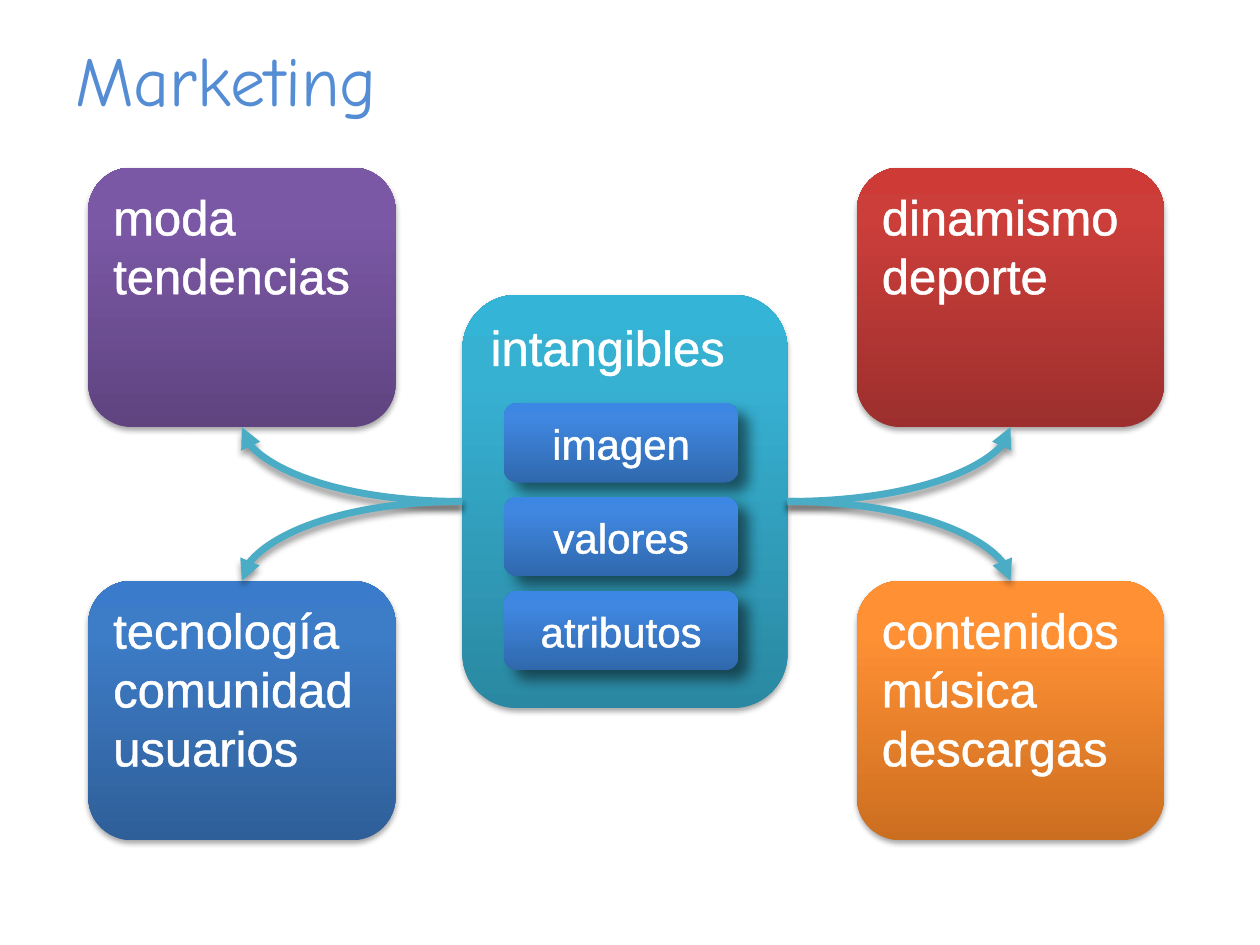
from dataclasses import dataclass

from lxml import etree
from pptx import Presentation
from pptx import util as u
from pptx.dml.color import RGBColor
from pptx.enum import shapes, text
from pptx.oxml.ns import qn


@dataclass(frozen=True)
class Theme:
    font: str = "Arial"
    title_font: str = "Comic Neue"
    title_size: int = 40
    box_size: int = 28
    chip_size: int = 24
    title: str = "548DD4"
    white: str = "FFFFFF"
    arrow: str = "4BACC6"
    purple: tuple = ("5F4480", "7B58A6", "7C57A8")
    red: tuple = ("9C2F2D", "CB3E3A", "CE3B37")
    blue: tuple = ("2F5F99", "3D7CC7", "3A7CCB")
    orange: tuple = ("CC6E20", "FF9034", "FF9136")
    teal: tuple = ("2A88A2", "37B1D2", "34B4D6")
    chip: tuple = ("3068AD", "3F87E0", "3C87E4")
    box_shadow: tuple = (35, 3.1, 1.8, 90)
    chip_shadow: tuple = (50, 8, 8, 40)
    arrow_shadow: tuple = (40, 4, 3, 90)


THEME = Theme()
TOP, LEFT, BOTTOM, RIGHT = range(4)


def add_color(parent, color):
    return etree.SubElement(parent, qn("a:srgbClr"), val=color)


def add_shadow(spPr, alpha, blur, dist, angle):
    effects = spPr.find(qn("a:effectLst"))
    if effects is None:
        effects = etree.SubElement(spPr, qn("a:effectLst"))
    shadow = etree.SubElement(
        effects, qn("a:outerShdw"), blurRad=str(u.Pt(blur)),
        dist=str(u.Pt(dist)), dir=str(angle * 60000), rotWithShape="0")
    etree.SubElement(add_color(shadow, "000000"), qn("a:alpha"),
                     val=str(alpha * 1000))


def fill_gradient(s, colors):
    s.fill.gradient()
    s.fill.gradient_angle = 90
    stops = s._element.spPr.find(f".//{qn('a:gsLst')}")
    for stop in list(stops):
        stops.remove(stop)
    for pos, color in zip((0, 80, 100), colors):
        add_color(etree.SubElement(stops, qn("a:gs"), pos=str(pos * 1000)), color)


def add_run(p, words, font, size, color):
    r = p.add_run()
    r.text = words
    r.font.name = font
    r.font.size = u.Pt(size)
    r.font.color.rgb = RGBColor.from_string(color)
    return r


def outline_run(r):
    ln = etree.Element(qn("a:ln"), w=str(u.Pt(1.45)))
    add_color(etree.SubElement(ln, qn("a:solidFill")), THEME.white)
    r.font._element.insert(0, ln)


def add_title(slide, words):
    s = slide.shapes.add_textbox(u.Inches(0.5), u.Inches(0.3), u.Inches(9), u.Inches(0.64))
    tf = s.text_frame
    tf.word_wrap = True
    tf.vertical_anchor = text.MSO_ANCHOR.MIDDLE
    add_run(tf.paragraphs[0], words, THEME.title_font, THEME.title_size, THEME.title)


def add_box(parent, place, lines, colors, size, shadow, centred=False):
    s = parent.shapes.add_shape(shapes.MSO_SHAPE.ROUNDED_RECTANGLE,
                                *(u.Inches(v) for v in place))
    fill_gradient(s, colors)
    s.line.fill.background()
    s.shadow.inherit = False
    add_shadow(s._element.spPr, *shadow)
    tf = s.text_frame
    tf.word_wrap = True
    tf.vertical_anchor = text.MSO_ANCHOR.MIDDLE if centred else text.MSO_ANCHOR.TOP
    for i, line in enumerate(lines):
        p = tf.add_paragraph() if i else tf.paragraphs[0]
        p.alignment = text.PP_ALIGN.CENTER if centred else text.PP_ALIGN.LEFT
        outline_run(add_run(p, line, THEME.font, size, THEME.white))
    return s


def add_centre(slide):
    group = slide.shapes.add_group_shape()
    panel = add_box(group, (3.67, 2.34, 2.58, 3.28), ["intangibles"], THEME.teal,
                    THEME.box_size, THEME.box_shadow)
    for i, word in enumerate(("imagen", "valores", "atributos")):
        add_box(group, (4, 3.2 + 0.745 * i, 1.86, 0.63), [word], THEME.chip,
                THEME.chip_size, THEME.chip_shadow, centred=True)
    return panel


def add_arrow(slide, start, start_site, end, end_site):
    c = slide.shapes.add_connector(shapes.MSO_CONNECTOR.CURVE, 0, 0, 0, 0)
    c.begin_connect(start, start_site)
    c.end_connect(end, end_site)
    spPr = c._element.spPr
    spPr.find(qn("a:prstGeom")).set("prst", "curvedConnector2")
    c.line.color.rgb = RGBColor.from_string(THEME.arrow)
    c.line.width = u.Pt(4)
    etree.SubElement(spPr.find(qn("a:ln")), qn("a:tailEnd"), type="triangle")
    add_shadow(spPr, *THEME.arrow_shadow)


def main():
    prs = Presentation()
    prs.slide_width, prs.slide_height = u.Inches(10), u.Inches(7.5)
    slide = prs.slides.add_slide(prs.slide_layouts[6])
    add_title(slide, "Marketing")
    panel = add_centre(slide)

    left, right, upper, lower = 0.7, 6.8, 1.33, 4.61
    corners = (
        (right, upper, ("dinamismo", "deporte"), THEME.red),
        (left, upper, ("moda", "tendencias"), THEME.purple),
        (right, lower, ("contenidos", "música", "descargas"), THEME.orange),
        (left, lower, ("tecnología", "comunidad", "usuarios"), THEME.blue),
    )
    for x, y, lines, colors in corners:
        box = add_box(slide, (x, y, 2.44, 2.06), lines, colors,
                      THEME.box_size, THEME.box_shadow)
        add_arrow(slide, panel, LEFT if x == left else RIGHT,
                  box, BOTTOM if y == upper else TOP)
    prs.save("out.pptx")


if __name__ == "__main__":
    main()
